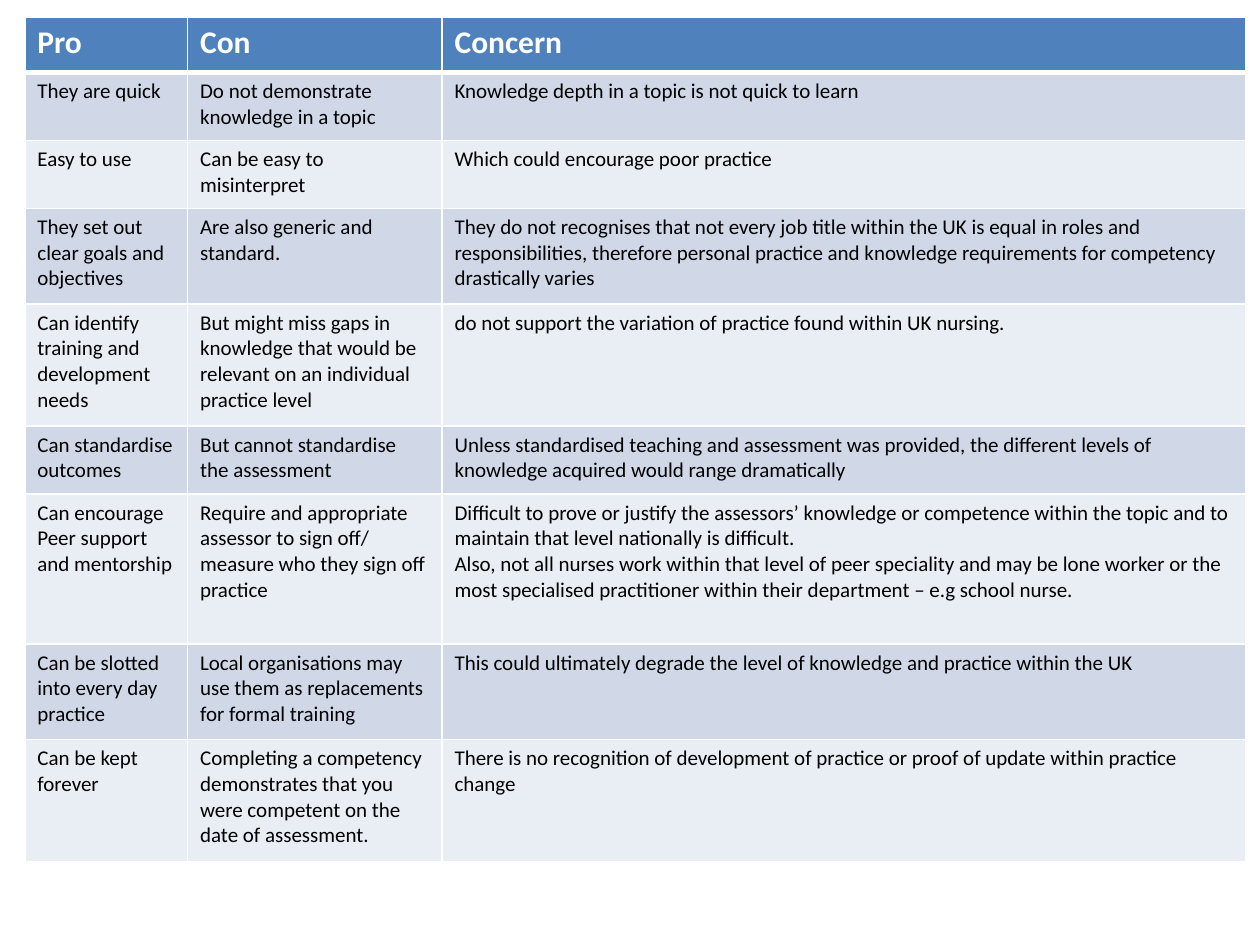
from dataclasses import dataclass

from lxml import etree
from pptx import Presentation
from pptx import util as u
from pptx.dml.color import RGBColor
from pptx.enum import text
from pptx.oxml import ns


@dataclass(frozen=True)
class Theme:
    font: str = "Calibri"
    head_size: int = 18
    body_size: int = 12
    head_fill: str = "4F81BD"
    bands: tuple = ("D0D8E8", "E9EDF4")
    head_text: str = "FFFFFF"
    body_text: str = "000000"
    rule: str = "FFFFFF"
    thin: int = 1
    thick: int = 3


class Deck:
    def __init__(self, theme, width, height):
        self.theme = theme
        self.prs = Presentation()
        self.prs.slide_width, self.prs.slide_height = u.Cm(width), u.Cm(height)
        self.s = None

    def slide(self):
        self.s = self.prs.slides.add_slide(self.prs.slide_layouts[6])

    def border(self, cell, side, width):
        tc_pr = cell._tc.get_or_add_tcPr()
        ln = etree.SubElement(tc_pr, ns.qn(f"a:ln{side}"), w=str(u.Pt(width)))
        fill = etree.SubElement(ln, ns.qn("a:solidFill"))
        etree.SubElement(fill, ns.qn("a:srgbClr"), val=self.theme.rule)

    def cell(self, cell, content, row):
        t = self.theme
        head = row == 0
        widths = {"L": t.thin, "R": t.thin,
                  "T": t.thick if row == 1 else t.thin,
                  "B": t.thick if head else t.thin}
        for side, width in widths.items():
            self.border(cell, side, width)
        cell.fill.solid()
        fill = t.head_fill if head else t.bands[(row - 1) % 2]
        cell.fill.fore_color.rgb = RGBColor.from_string(fill)
        cell.vertical_anchor = text.MSO_ANCHOR.TOP
        tf = cell.text_frame
        for i, line in enumerate(content.split("\n")):
            p = tf.add_paragraph() if i else tf.paragraphs[0]
            r = p.add_run()
            r.text = line
            r.font.name = t.font
            r.font.size = u.Pt(t.head_size if head else t.body_size)
            r.font.bold = head
            color = t.head_text if head else t.body_text
            r.font.color.rgb = RGBColor.from_string(color)

    def table(self, left, top, cols, rows, data):
        frame = self.s.shapes.add_table(
            len(rows), len(cols), u.Cm(left), u.Cm(top), u.Cm(sum(cols)), u.Cm(sum(rows)))
        tbl = frame.table
        for col, width in zip(tbl.columns, cols):
            col.width = u.Cm(width)
        for row, height in zip(tbl.rows, rows):
            row.height = u.Cm(height)
        for i, line in enumerate(data):
            for j, content in enumerate(line):
                self.cell(tbl.cell(i, j), content, i)

    def save(self):
        self.prs.save("out.pptx")


COLS = [3.28, 5.13, 16.2]
ROWS = [1.12, 1.37, 1.37, 1.93, 2.46, 1.37, 3.02, 1.93, 2.46]
COMPETENCIES = [
    ("Pro", "Con", "Concern"),
    ("They are quick",
     "Do not demonstrate knowledge in a topic",
     "Knowledge depth in a topic is not quick to learn"),
    ("Easy to use",
     "Can be easy to misinterpret",
     "Which could encourage poor practice"),
    ("They set out clear goals and objectives",
     "Are also generic and standard.",
     "They do not recognises that not every job title within the UK is equal in roles and "
     "responsibilities, therefore personal practice and knowledge requirements for "
     "competency drastically varies"),
    ("Can identify training and development needs",
     "But might miss gaps in knowledge that would be relevant on an individual practice level",
     "do not support the variation of practice found within UK nursing."),
    ("Can standardise outcomes",
     "But cannot standardise the assessment",
     "Unless standardised teaching and assessment was provided, the different levels of "
     "knowledge acquired would range dramatically"),
    ("Can encourage Peer support and mentorship",
     "Require and appropriate assessor to sign off/ measure who they sign off practice",
     "Difficult to prove or justify the assessors’ knowledge or competence within the topic "
     "and to maintain that level nationally is difficult.\n"
     "Also, not all nurses work within that level of peer speciality and may be lone worker "
     "or the most specialised practitioner within their department – e.g school nurse."),
    ("Can be slotted into every day practice",
     "Local organisations may use them as replacements for formal training",
     "This could ultimately degrade the level of knowledge and practice within the UK"),
    ("Can be kept forever",
     "Completing a competency demonstrates that you were competent on the date of assessment.",
     "There is no recognition of development of practice or proof of update within "
     "practice change"),
]


def main():
    deck = Deck(Theme(), 25.4, 19.05)
    deck.slide()
    deck.table(0.5, 0.34, COLS, ROWS, COMPETENCIES)
    deck.save()


if __name__ == "__main__":
    main()
